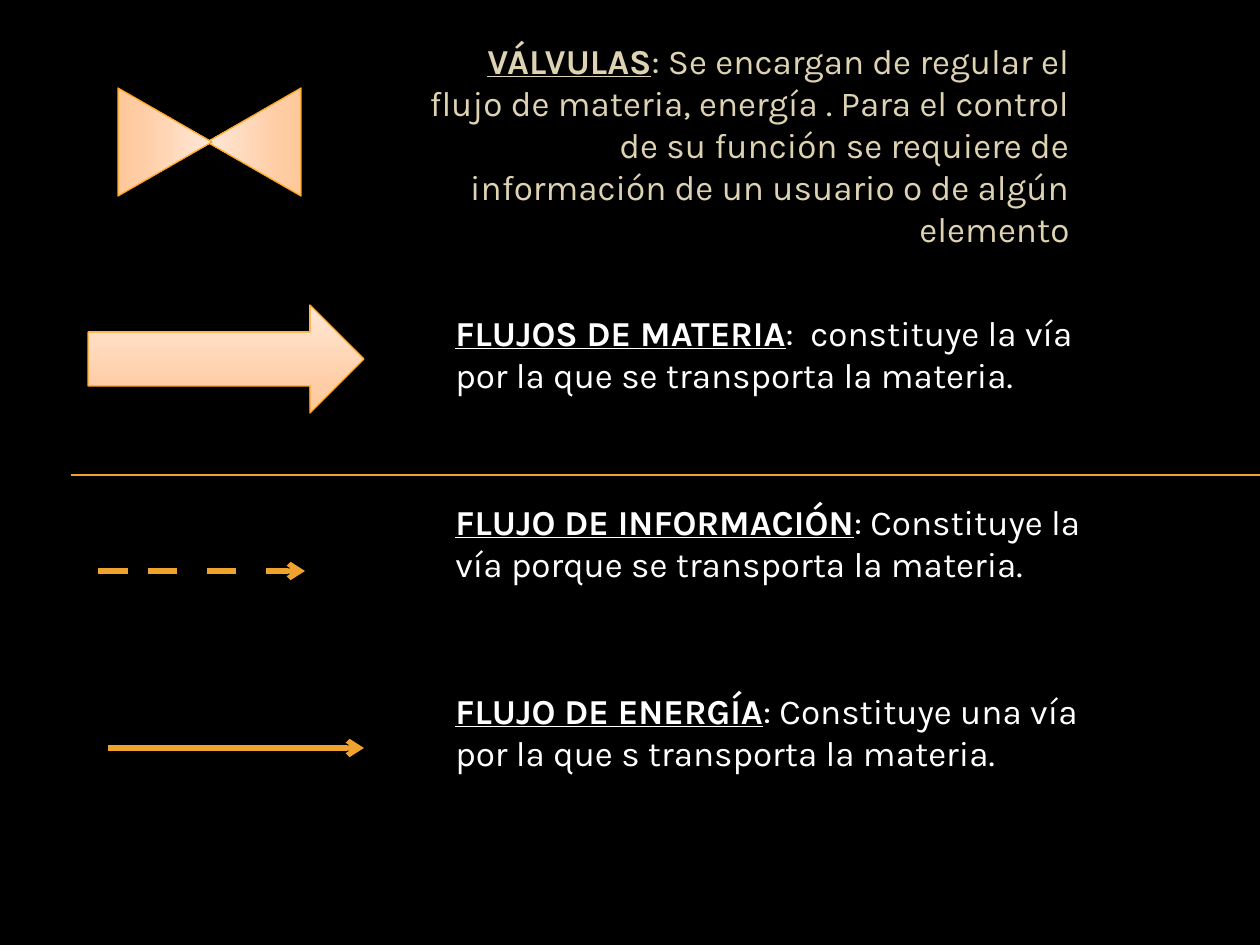
from copy import deepcopy

from pptx import Presentation
from pptx.dml.color import RGBColor
from pptx.enum.shapes import MSO_CONNECTOR as LINE, MSO_SHAPE as SHAPE
from pptx.enum.text import MSO_ANCHOR as ANCHOR, PP_ALIGN as ALIGN
from pptx.oxml.ns import qn
from pptx.oxml.xmlchemy import OxmlElement as Element
from pptx.util import Pt

SCALE = 914400 / 126
FONT = "Karla"
COLORS = {
    "back": "000000", "text": "FFFFFF", "sand": "DDD2B1",
    "line": "F0A22E", "edge": "FFA51F",
}
FADE = [(0, "FFC89A"), (0.25, "FFCDA5"), (1, "FFE8D8")]

VALVE = ("VÁLVULAS", ": Se encargan de regular el flujo de materia, energía . "
         "Para el control de su función se requiere de información de un "
         "usuario o de algún elemento")
FLOWS = [
    ("FLUJOS DE MATERIA",
     ":  constituye la vía por la que se transporta la materia."),
    ("FLUJO DE INFORMACIÓN",
     ": Constituye la vía porque se transporta la materia."),
    ("FLUJO DE ENERGÍA",
     ": Constituye una vía por la que s transporta la materia."),
]
DASHES = [(98, 128), (148, 177), (207, 236), (266, 305)]


def px(*vals):
    return [round(val * SCALE) for val in vals]


def rgb(name):
    return RGBColor.from_string(COLORS[name])


def add_text(slide, box, items, color="text", align=ALIGN.LEFT,
             anchor=ANCHOR.TOP, indent=0, gap=0):
    """Add one paragraph for each (term, meaning) pair."""
    frame = slide.shapes.add_textbox(*px(*box)).text_frame
    frame.word_wrap = True
    frame.vertical_anchor = anchor
    for i, item in enumerate(items):
        para = frame.add_paragraph() if i else frame.paragraphs[0]
        para.alignment = align
        para.space_before = Pt(gap if i else 0)
        if indent:
            para._p.get_or_add_pPr().set("marL", str(px(indent)[0]))
        for part, strong in zip(item, (True, False)):
            run = para.add_run()
            run.text = part
            font = run.font
            font.name, font.size = FONT, Pt(20)
            font.bold = font.underline = strong
            font.color.rgb = rgb(color)


def add_solid(slide, kind, box, turn=0):
    """Add a preset shape with the peach fade, light at its top."""
    shape = slide.shapes.add_shape(kind, *px(*box))
    shape.rotation = turn
    shape.shadow.inherit = False
    shape.line.color.rgb = rgb("edge")
    shape.line.width = Pt(0.75)
    fill = shape.fill
    fill.gradient()
    fill.gradient_angle = 90
    stops = shape._element.spPr.find(qn("a:gradFill")).find(qn("a:gsLst"))
    stops.append(deepcopy(stops[0]))
    for stop, (pos, color) in zip(fill.gradient_stops, FADE):
        stop.position = pos
        stop.color.rgb = RGBColor.from_string(color)


def add_line(slide, left, right, y, width=3, arrow=False):
    line = slide.shapes.add_connector(LINE.STRAIGHT, *px(left, y, right, y))
    line.line.color.rgb = rgb("line")
    line.line.width = Pt(width)
    if arrow:
        tip = Element("a:tailEnd")
        tip.set("type", "arrow")
        line.line._get_or_add_ln().append(tip)
    line._element.spPr.append(Element("a:effectLst"))


def main():
    deck = Presentation()
    deck.slide_width, deck.slide_height = px(1260, 945)
    slide = deck.slides.add_slide(deck.slide_layouts[6])
    slide.background.fill.solid()
    slide.background.fill.fore_color.rgb = rgb("back")

    add_line(slide, 71, 1260, 475, width=0.75)
    add_text(slide, (403, 49, 679, 207), [VALVE], color="sand",
             align=ALIGN.RIGHT, anchor=ANCHOR.BOTTOM)
    for left, turn in ((200, 270), (111, 90)):
        add_solid(slide, SHAPE.ISOSCELES_TRIANGLE, (left, 95, 108, 94), turn)
    add_solid(slide, SHAPE.RIGHT_ARROW, (88, 305, 276, 108))
    add_text(slide, (433, 305, 679, 640), FLOWS, indent=10, gap=60)
    add_line(slide, 108, 364, 748, arrow=True)
    for dash in DASHES:
        add_line(slide, *dash, 571, arrow=dash == DASHES[-1])

    deck.save("out.pptx")


if __name__ == "__main__":
    main()
